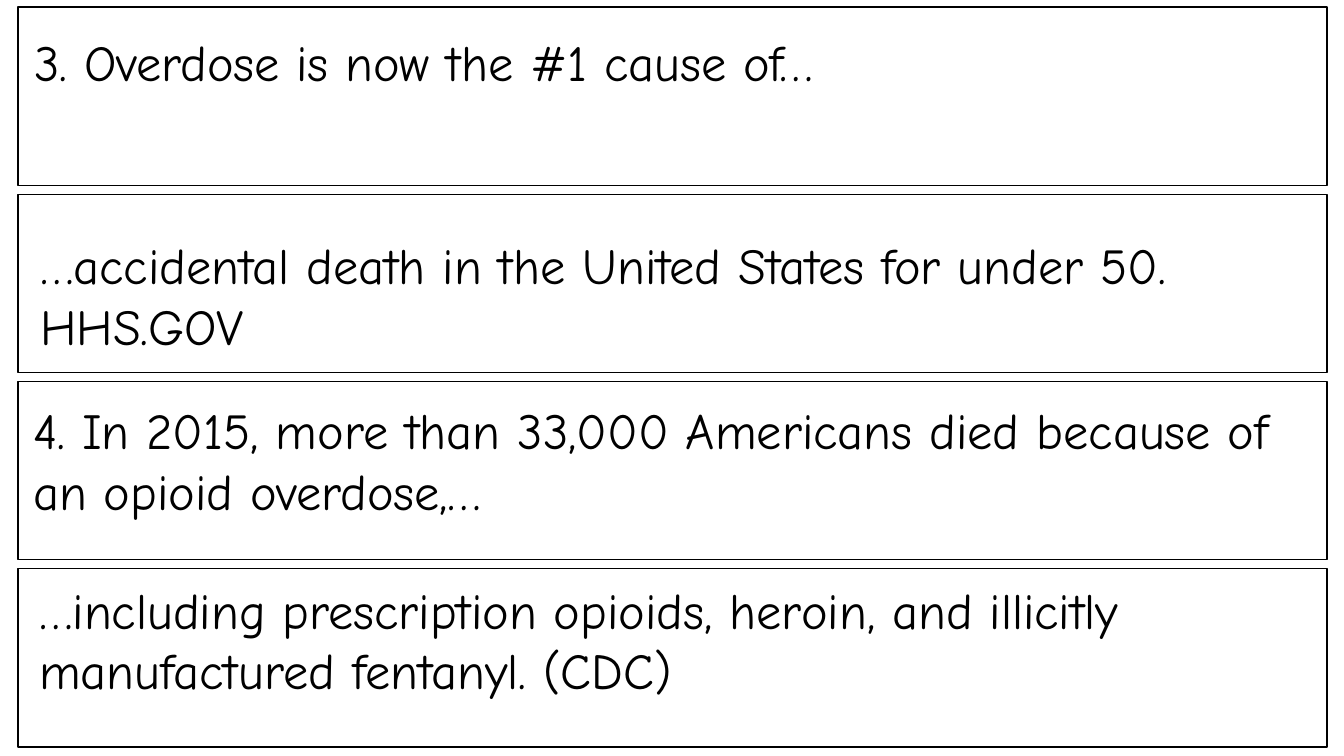
from dataclasses import dataclass

from pptx import Presentation
from pptx.dml.color import RGBColor
from pptx.enum.shapes import MSO_SHAPE
from pptx.enum.text import MSO_ANCHOR, MSO_AUTO_SIZE
from pptx.util import Inches, Pt


@dataclass(frozen=True)
class Theme:
    font: str = "Comic Neue"
    size: float = 36
    rule: float = 1
    ink: RGBColor = RGBColor(0, 0, 0)
    paper: RGBColor = RGBColor(255, 255, 255)


THEME = Theme()
WIDE, HIGH = 13.33, 7.5

# Strips share one column and repeat at an equal pitch
LEFT, TOP = 0.18, 0.07
STRIP_W, STRIP_H, GAP = 12.98, 1.77, 0.087
PITCH = STRIP_H + GAP
TEXT_W = 12.85

# Wording, inset from the strip's corner (across, down), text height
FACTS = [
    ("3. Overdose is now the #1 cause of…", 0.06, 0.19, 0.71),
    ("…accidental death in the United States for under 50. HHS.GOV",
     0.12, 0.35, 1.31),
    ("4. In 2015, more than 33,000 Americans died because of "
     "an opioid overdose,…", 0.05, 0.13, 1.31),
    ("…including prescription opioids, heroin, and illicitly "
     "manufactured fentanyl. (CDC)", 0.11, 0.05, 1.31),
]


def add_strip(slide, top):
    strip = slide.shapes.add_shape(
        MSO_SHAPE.RECTANGLE,
        Inches(LEFT), Inches(top), Inches(STRIP_W), Inches(STRIP_H))
    strip.shadow.inherit = False
    strip.fill.solid()
    strip.fill.fore_color.rgb = THEME.paper
    strip.line.color.rgb = THEME.ink
    strip.line.width = Pt(THEME.rule)


def add_fact(slide, words, left, top, height):
    box = slide.shapes.add_textbox(
        Inches(left), Inches(top), Inches(TEXT_W), Inches(height))
    frame = box.text_frame
    frame.word_wrap = True
    frame.auto_size = MSO_AUTO_SIZE.SHAPE_TO_FIT_TEXT
    frame.vertical_anchor = MSO_ANCHOR.TOP
    frame.text = words
    for run in frame.paragraphs[0].runs:
        run.font.name = THEME.font
        run.font.size = Pt(THEME.size)
        run.font.color.rgb = THEME.ink


def main():
    deck = Presentation()
    deck.slide_width, deck.slide_height = Inches(WIDE), Inches(HIGH)
    slide = deck.slides.add_slide(deck.slide_layouts[6])
    for row, (words, across, down, height) in enumerate(FACTS):
        top = TOP + row * PITCH
        add_strip(slide, top)
        add_fact(slide, words, LEFT + across, top + down, height)
    deck.save("out.pptx")


if __name__ == "__main__":
    main()
